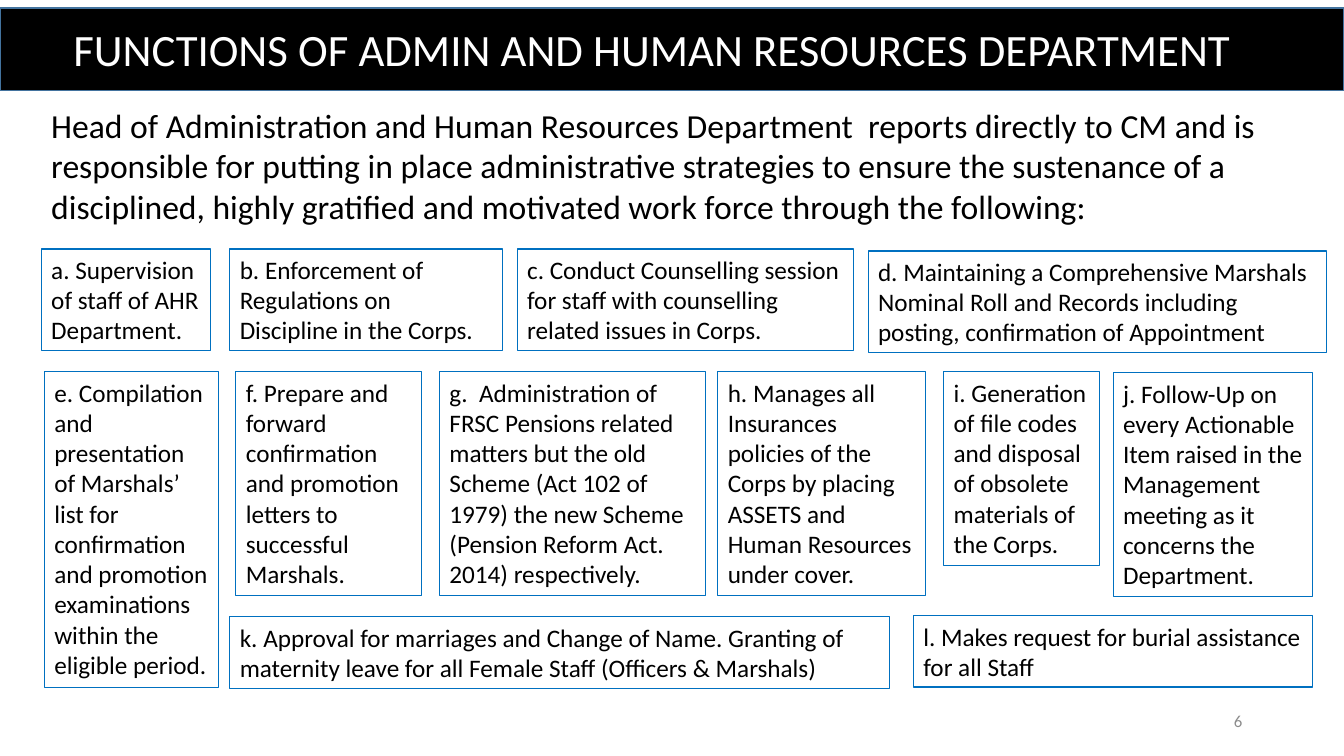
"""Build the slide on the functions of the Admin and Human Resources Department."""
from pptx import Presentation
from pptx.dml.color import RGBColor
from pptx.enum.shapes import MSO_SHAPE
from pptx.enum.text import MSO_ANCHOR, PP_ALIGN
from pptx.util import Inches, Pt

RECT = MSO_SHAPE.RECTANGLE
TOP, MIDDLE = MSO_ANCHOR.TOP, MSO_ANCHOR.MIDDLE
LEFT, RIGHT = PP_ALIGN.LEFT, PP_ALIGN.RIGHT
FONT = "Calibri"
COLORS = {"black": "000000", "white": "FFFFFF", "edge": "43739E",
          "blue": "0070C0", "gray": "8C8C8C"}
PAD, LINE = 0.1, 0.303

deck = Presentation()
deck.slide_width, deck.slide_height = Inches(13.33), Inches(7.5)
slide = deck.slides.add_slide(deck.slide_layouts[6])


def color(name):
    return RGBColor.from_string(COLORS[name])


def write(text, left, top, width, height, size=18, ink="black",
          border=None, align=LEFT, anchor=TOP):
    box = slide.shapes.add_textbox(
        Inches(left), Inches(top), Inches(width), Inches(height))
    if border:
        box.line.color.rgb = color(border)
        box.line.width = Pt(0.75)
    frame = box.text_frame
    frame.word_wrap = True
    frame.vertical_anchor = anchor
    para = frame.paragraphs[0]
    para.alignment = align
    run = para.add_run()
    run.text = text
    run.font.name = FONT
    run.font.size = Pt(size)
    run.font.color.rgb = color(ink)


bar = slide.shapes.add_shape(RECT, 0, Inches(0.08), deck.slide_width, Inches(0.82))
bar.shadow.inherit = False
bar.fill.solid()
bar.fill.fore_color.rgb = color("black")
bar.line.color.rgb = color("edge")
bar.line.width = Pt(1)

write("FUNCTIONS OF ADMIN AND HUMAN RESOURCES DEPARTMENT",
      0.63, 0.17, 12.07, 0.64, size=32, ink="white")
write("Head of Administration and Human Resources Department  reports directly "
      "to CM and is responsible for putting in place administrative strategies "
      "to ensure the sustenance of a disciplined, highly gratified and motivated "
      "work force through the following:",
      0.41, 0.99, 12.51, 1.31, size=24)

duties = [
    (0.41, 2.47, 1.68, 3, "a. Supervision of staff of AHR Department."),
    (2.28, 2.47, 2.7, 3, "b. Enforcement of Regulations on Discipline in the Corps."),
    (5.13, 2.47, 3.34, 3, "c. Conduct Counselling session for staff with counselling "
                          "related issues in Corps."),
    (8.61, 2.49, 4.55, 3, "d. Maintaining a Comprehensive Marshals Nominal Roll and "
                          "Records including posting, confirmation of Appointment"),
    (0.44, 3.69, 1.73, 10, "e. Compilation and presentation of Marshals’ list for "
                           "confirmation and promotion examinations within the "
                           "eligible period."),
    (2.34, 3.69, 1.84, 7, "f. Prepare and forward confirmation and promotion letters "
                          "to successful Marshals."),
    (4.36, 3.69, 2.64, 7, "g.  Administration of FRSC Pensions related matters but the "
                          "old Scheme (Act 102 of 1979) the new Scheme (Pension "
                          "Reform Act. 2014) respectively."),
    (7.12, 3.69, 2.06, 7, "h. Manages all Insurances policies of the Corps by placing "
                          "ASSETS and Human Resources under cover."),
    (9.36, 3.69, 1.55, 6, "i. Generation of file codes and disposal of obsolete "
                          "materials of the Corps."),
    (11.04, 3.7, 1.98, 7, "j. Follow-Up on every Actionable Item raised in the "
                          "Management meeting as it concerns the Department."),
    (2.28, 6.12, 6.54, 2, "k. Approval for marriages and Change of Name. Granting of "
                          "maternity leave for all Female Staff (Officers & Marshals)"),
    (9.06, 6.11, 3.96, 2, "l. Makes request for burial assistance for all Staff"),
]
for left, top, width, lines, duty in duties:
    write(duty, left, top, width, PAD + LINE * lines, border="blue")

write("6", 9.42, 6.95, 3, 0.4, size=12, ink="gray", align=RIGHT, anchor=MIDDLE)

deck.save("out.pptx")
